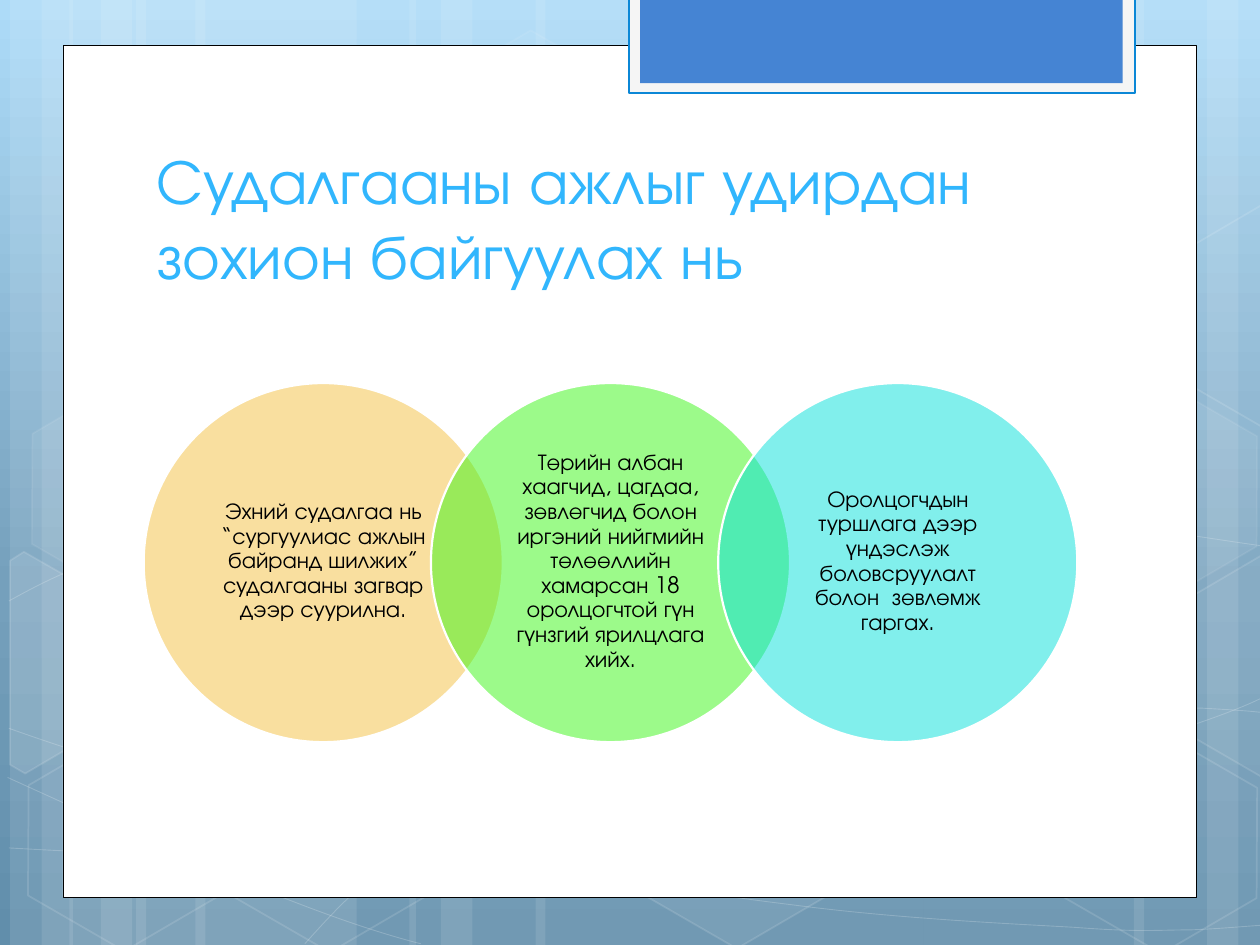
from lxml import etree
from copy import deepcopy
from pptx import Presentation
from pptx import util as u
from pptx.dml.color import RGBColor
from pptx.enum import shapes, text
from pptx.oxml.ns import qn

FONT = "TeX Gyre Adventor"
WIDTH, HEIGHT = 10, 7.5
COLORS = {"white": "FFFFFF", "black": "000000", "title": "31B6FD", "tab": "4584D3",
          "tab frame": "F5F5F5", "tab line": "0B87D6",
          "amber": "F5C040", "green": "3AF617", "cyan": "05E0DB"}
SKY = [(0, "ADDBF8"), (0.62, "75A0BC"), (1, "618EAB")]

TITLE = "Судалгааны ажлыг удирдан зохион байгуулах нь"
STEPS = [
    ("amber", "Эхний судалгаа нь “сургуулиас ажлын байранд шилжих” "
              "судалгааны загвар дээр суурилна."),
    ("green", "Төрийн албан хаагчид, цагдаа, зөвлөгчид болон иргэний нийгмийн төлөөллийн "
              "хамарсан 18 оролцогчтой гүн гүнзгий ярилцлага хийх."),
    ("cyan", "Оролцогчдын туршлага дээр үндэслэж боловсруулалт болон  зөвлөмж гаргах."),
]

# Backdrop: left edges of the full-height bars, by bar width
BARS = {1.75: [1.08, 1.55, 7.33], 0.5: [0.08, 0.55, 9.58, 3.25],
        0.83: [0.33, 0.8, 9, 3.5], 3.08: [4.25]}
# Start point, then Bezier segments (two controls and an end point)
WAVES = [
    ((0.07, 6.73), [(0.61, 6.76, 1.15, 6.79, 1.9, 6.78), (2.65, 6.77, 3.58, 6.75, 4.58, 6.65),
                    (5.58, 6.55, 7, 6.36, 7.92, 6.17), (8.83, 5.98, 9.77, 5.68, 10.07, 5.51)]),
    ((0.07, 4.77), [(0.36, 4.61, 0.65, 4.46, 1.21, 4.31), (1.78, 4.16, 2.59, 3.94, 3.47, 3.87),
                    (4.36, 3.8, 5.44, 3.79, 6.54, 3.87), (7.64, 3.95, 9.47, 4.26, 10.07, 4.34)]),
    ((0.06, 6.17), [(1.27, 6.72, 2.47, 7.27, 3.34, 7.49)]),
    ((0.07, 5.78), [(0.38, 5.89, 0.7, 6, 1.28, 6.16), (1.86, 6.31, 2.73, 6.56, 3.57, 6.73),
                    (4.4, 6.9, 5.45, 7.08, 6.28, 7.18), (7.11, 7.29, 8, 7.33, 8.53, 7.36),
                    (9.05, 7.4, 9.19, 7.38, 9.45, 7.38), (9.71, 7.37, 9.89, 7.35, 10.07, 7.34)]),
    ((2.42, 7.49), [(2.6, 7.29, 2.78, 7.09, 3.02, 6.91), (3.26, 6.73, 3.6, 6.53, 3.88, 6.39),
                    (4.16, 6.25, 4.33, 6.19, 4.7, 6.09), (5.06, 5.99, 5.73, 5.85, 6.08, 5.78),
                    (6.44, 5.71, 6.49, 5.71, 6.8, 5.69), (7.11, 5.66, 7.6, 5.63, 7.94, 5.62),
                    (8.29, 5.61, 8.86, 5.62, 8.86, 5.62), (8.86, 5.62, 9.53, 5.62, 9.53, 5.62),
                    (9.71, 5.63, 9.88, 5.64, 9.97, 5.65), (10.06, 5.66, 10.03, 5.65, 10.06, 5.66)]),
]
# Left, top, fill opacity (0 = none), line opacity
HEXAGONS = [(3.34, 0.36, 4, 8), (4.97, 5.89, 6, 12), (0.11, 5.91, 0, 12),
            (0.14, 3.12, 7, 8), (1.74, 5.92, 0, 12), (7.53, 4.53, 10, 12),
            (8.34, 5.93, 0, 12), (8.34, 3.14, 7, 8)]
# Hexagons cut by the slide edge: corners, fill opacity
CUT_HEXAGONS = [
    ([(0.08, 4.45), (0.19, 4.38), (0.96, 4.82), (0.95, 5.7), (0.2, 6.14), (0.08, 6.07)], 10),
    ([(9.26, 4.85), (10.01, 4.41), (10.09, 4.46), (10.09, 6.13), (10.02, 6.17), (9.26, 5.73)], 4),
    ([(9.26, 2.07), (10.01, 1.63), (10.1, 1.68), (10.09, 3.35), (10.02, 3.39), (9.26, 2.95)], 0),
]


def paint(fill, color, opacity=100):
    if not opacity:
        fill.background()
        return
    fill.solid()
    fill.fore_color.rgb = RGBColor.from_string(COLORS[color])
    if opacity < 100:
        solid = fill._xPr.find(qn("a:solidFill"))
        etree.SubElement(solid[0], qn("a:alpha"), val=str(opacity * 1000))


def style(shape, fill="white", opacity=100, line=None, weight=1, line_opacity=100):
    shape.shadow.inherit = False
    paint(shape.fill, fill, opacity)
    if line:
        shape.line.width = u.Pt(weight)
        paint(shape.line.fill, line, line_opacity)
    else:
        shape.line.fill.background()
    return shape


def add(kind, *box):
    return slide.shapes.add_shape(kind, *map(u.Inches, box))


def outline(points, close):
    start, *rest = [(u.Inches(x), u.Inches(y)) for x, y in points]
    builder = slide.shapes.build_freeform(*start)
    builder.add_line_segments(rest, close=close)
    return builder.convert_to_shape()


def curve(start, segments):
    """Turn every three points of an open outline into one Bezier segment."""
    points = [start] + [s[i:i + 2] for s in segments for i in (0, 2, 4)]
    wave = outline(points, False)
    lines = list(wave._element.iter(qn("a:lnTo")))
    for i in range(0, len(lines), 3):
        bezier = etree.Element(qn("a:cubicBezTo"))
        lines[i].addprevious(bezier)
        for line in lines[i:i + 3]:
            bezier.append(line[0])
            line.getparent().remove(line)
    return wave


def write(frame, words, size, color, align, anchor):
    frame.word_wrap = True
    frame.auto_size = text.MSO_AUTO_SIZE.NONE
    frame.vertical_anchor = anchor
    paragraph = frame.paragraphs[0]
    paragraph.alignment = align
    run = paragraph.add_run()
    run.text = words
    run.font.name, run.font.size = FONT, u.Pt(size)
    run.font.color.rgb = RGBColor.from_string(COLORS[color])
    return paragraph


deck = Presentation()
deck.slide_width, deck.slide_height = u.Inches(WIDTH), u.Inches(HEIGHT)
slide = deck.slides.add_slide(deck.slide_layouts[5])
RECT, HEXAGON, OVAL = (shapes.MSO_SHAPE.RECTANGLE, shapes.MSO_SHAPE.HEXAGON,
                       shapes.MSO_SHAPE.OVAL)

# Sky gradient, light at the top
sky = slide.background.fill
sky.gradient()
sky.gradient_angle = 270
stops = sky.gradient_stops[0]._gs.getparent()
stops.insert(1, deepcopy(stops[0]))
for stop, (position, color) in zip(sky.gradient_stops, SKY):
    stop.position = position
    stop.color.rgb = RGBColor.from_string(color)

# Backdrop bars, waves and hexagons
for width, lefts in BARS.items():
    for left in lefts:
        style(add(RECT, left, 0, width, HEIGHT), opacity=10)
for start, segments in WAVES:
    style(curve(start, segments), opacity=0, line="white", weight=0.5, line_opacity=20)
for left, top, opacity, line_opacity in HEXAGONS:
    hexagon = add(HEXAGON, left, top, 1.75, 1.52)
    hexagon.adjustments[0] = 0.285
    hexagon.rotation = 30
    style(hexagon, opacity=opacity, line="white", line_opacity=line_opacity)
for corners, opacity in CUT_HEXAGONS:
    style(outline(corners, True), opacity=opacity, line="white", line_opacity=12)

# White panel with the blue tab
style(add(RECT, 0.5, 0.36, 9, 6.76), line="black", weight=0.5)
style(add(RECT, 4.99, -0.02, 4.02, 0.76), "tab frame", line="tab line", weight=1.25)
style(add(RECT, 5.08, -0.02, 3.83, 0.68), "tab")

# Title, raised above the panel
title = slide.shapes.title
title.left, title.top, title.width, title.height = map(u.Inches, (1.14, 1.12, 7.68, 1.25))
write(title.text_frame, TITLE, 36, "title", text.PP_ALIGN.LEFT, text.MSO_ANCHOR.BOTTOM)
slide.shapes._spTree.append(title._element)

# Overlapping circles, each step 80 % of the diameter, with a text square inside
LEFT, TOP, DIAMETER, SQUARE = 1.14, 3.04, 2.85, 2.01
for i, (color, words) in enumerate(STEPS):
    left = LEFT + i * 0.8 * DIAMETER
    style(add(OVAL, left, TOP, DIAMETER, DIAMETER), color, 50, "white", 1.25)
    box = map(u.Inches, (left + 0.42, TOP + 0.41, SQUARE, SQUARE))
    frame = slide.shapes.add_textbox(*box).text_frame
    frame.margin_left = frame.margin_right = u.Inches(0.16)
    frame.margin_top = frame.margin_bottom = u.Inches(0.02)
    write(frame, words, 13, "black", text.PP_ALIGN.CENTER,
          text.MSO_ANCHOR.MIDDLE).line_spacing = 0.9

deck.save("out.pptx")
